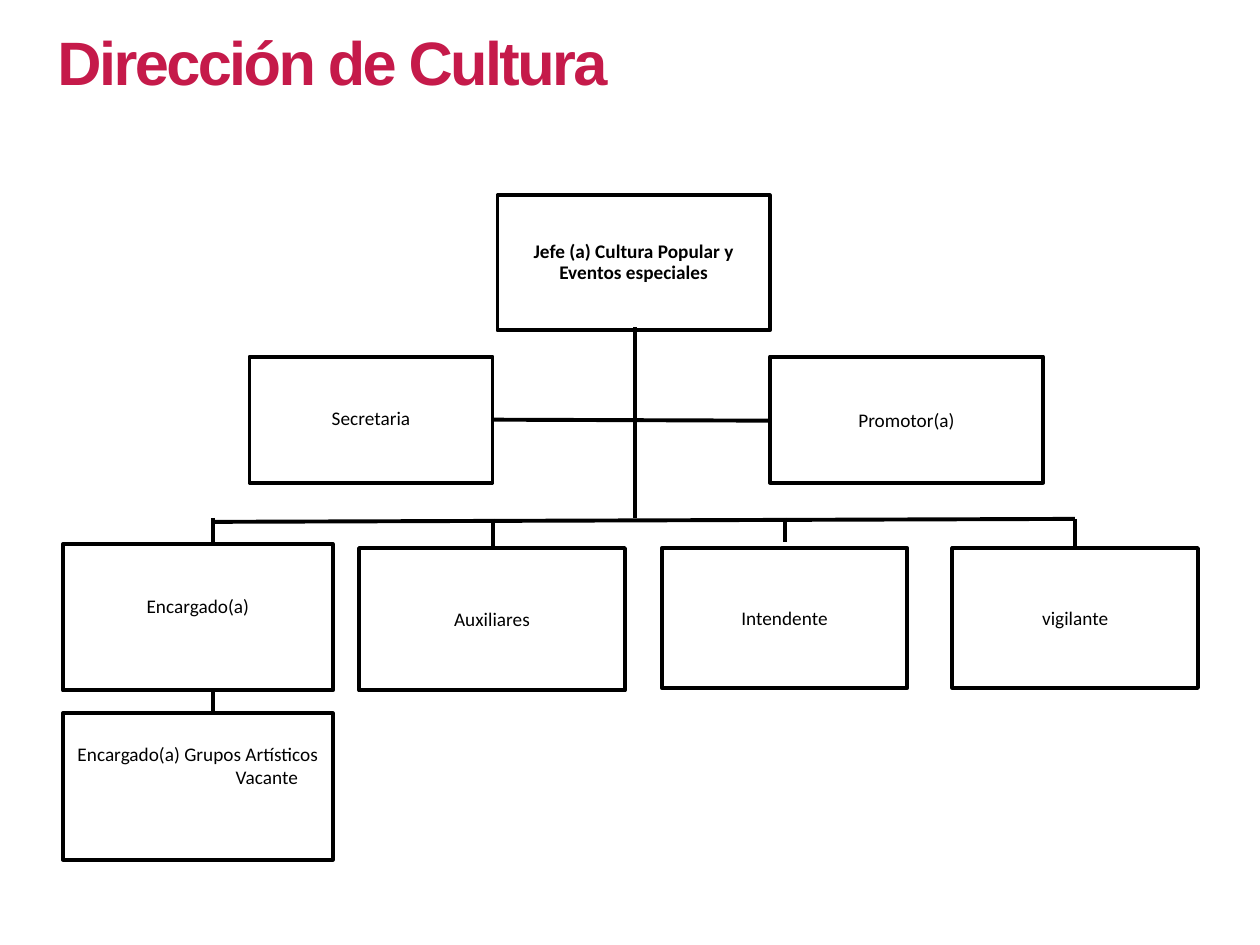
from dataclasses import dataclass

from lxml.etree import SubElement
from pptx import Presentation
from pptx.dml.color import RGBColor
from pptx.enum.shapes import MSO_CONNECTOR as Connector
from pptx.enum.shapes import MSO_SHAPE as Preset
from pptx.enum.text import MSO_ANCHOR as Anchor
from pptx.enum.text import PP_ALIGN as Align
from pptx.oxml.ns import qn
from pptx.util import Cm, Pt

COLORS = {"title": "C51A4A", "ink": "000000", "paper": "FFFFFF"}
LINE_WIDTH = Pt(2.25)
INSET = 0.25  # cm


@dataclass
class Post:
    """One box of the chart, in centimetres; lift is extra space below the text."""
    lines: tuple[str, ...]
    left: float
    top: float
    width: float
    height: float
    bold: bool = False
    spacing: float = 1.0
    lift: float = 0
    filled: bool = False
    indent: float = 0  # left indent of the lines after the first


@dataclass
class Link:
    x1: float
    y1: float
    x2: float
    y2: float


POSTS = [
    Post(("Jefe (a) Cultura Popular y Eventos especiales",),
         10.03, 3.94, 5.49, 2.72, bold=True, spacing=0.9),
    Post(("Secretaria",), 5.03, 7.19, 4.9, 2.54, spacing=0.9),
    Post(("Promotor(a)",), 15.52, 7.19, 5.51, 2.54, filled=True),
    Post(("Encargado(a)",), 1.27, 10.97, 5.44, 2.95, lift=0.45),
    Post(("Auxiliares",), 7.24, 11.05, 5.36, 2.87),
    Post(("Intendente",), 13.34, 11.05, 4.95, 2.82),
    Post(("vigilante",), 19.2, 11.05, 4.95, 2.82),
    Post(("Encargado(a) Grupos Artísticos", "Vacante"),
         1.27, 14.38, 5.44, 2.95, lift=0.87, indent=2.78),
]

# Each drop goes straight down: x, start, end
DROPS = [
    (12.8, 6.6, 10.44),
    (4.29, 10.44, 10.92),
    (9.93, 10.46, 11.05),
    (15.82, 10.44, 10.92),
    (21.67, 10.46, 11.05),
    (4.29, 13.89, 14.38),
]
LINKS = [
    Link(4.29, 10.52, 21.67, 10.46),
    Link(9.93, 8.46, 15.52, 8.48),
    *(Link(x, start, x, end) for x, start, end in DROPS),
]


def color(name: str) -> RGBColor:
    return RGBColor.from_string(COLORS[name])


def write(paragraph, text: str, *, font: str = "Calibri", size: float = 11,
          ink: str = "ink", bold: bool = False, align=Align.CENTER,
          line_spacing: float = 1.0, tracking: float = 0, indent: float = 0) -> None:
    """Add formatted text; tracking is in points and indent in centimetres."""
    paragraph.alignment = align
    paragraph.line_spacing = line_spacing
    if indent:
        paragraph._p.get_or_add_pPr().set("marL", str(Cm(indent)))
    run = paragraph.add_run()
    run.text = text
    run.font.name = font
    run.font.size = Pt(size)
    run.font.bold = bold
    run.font.color.rgb = color(ink)
    if tracking:
        run._r.get_or_add_rPr().set("spc", str(round(tracking * 100)))


def draw_title(slide, text: str) -> None:
    box = slide.shapes.add_textbox(Cm(0.91), Cm(0.36), Cm(17.3), Cm(1.75))
    box.text_frame.word_wrap = True
    write(box.text_frame.paragraphs[0], text, font="Arial", size=35,
          ink="title", bold=True, align=Align.LEFT, tracking=-1.5)


def draw_link(slide, link: Link) -> None:
    connector = slide.shapes.add_connector(
        Connector.STRAIGHT, Cm(link.x1), Cm(link.y1), Cm(link.x2), Cm(link.y2))
    connector.line.color.rgb = color("ink")
    connector.line.width = LINE_WIDTH
    SubElement(connector._element.spPr, qn("a:effectLst"))


def draw_post(slide, post: Post) -> None:
    box = slide.shapes.add_shape(
        Preset.RECTANGLE, Cm(post.left), Cm(post.top), Cm(post.width), Cm(post.height))
    box.shadow.inherit = False
    if post.filled:
        box.fill.solid()
        box.fill.fore_color.rgb = color("paper")
    else:
        box.fill.background()
    box.line.color.rgb = color("ink")
    box.line.width = LINE_WIDTH

    frame = box.text_frame
    frame.word_wrap = True
    frame.vertical_anchor = Anchor.MIDDLE
    frame.margin_left = frame.margin_right = Cm(INSET)
    frame.margin_bottom = Cm(INSET / 2 + post.lift)
    for number, line in enumerate(post.lines):
        paragraph = frame.add_paragraph() if number else frame.paragraphs[0]
        write(paragraph, line, bold=post.bold, line_spacing=post.spacing,
              indent=post.indent if number else 0)


def main() -> None:
    deck = Presentation()
    deck.slide_width, deck.slide_height = Cm(25.4), Cm(19.05)
    slide = deck.slides.add_slide(deck.slide_layouts[6])
    for link in LINKS:
        draw_link(slide, link)
    for post in POSTS:
        draw_post(slide, post)
    draw_title(slide, "Dirección de Cultura")
    deck.save("out.pptx")


if __name__ == "__main__":
    main()
